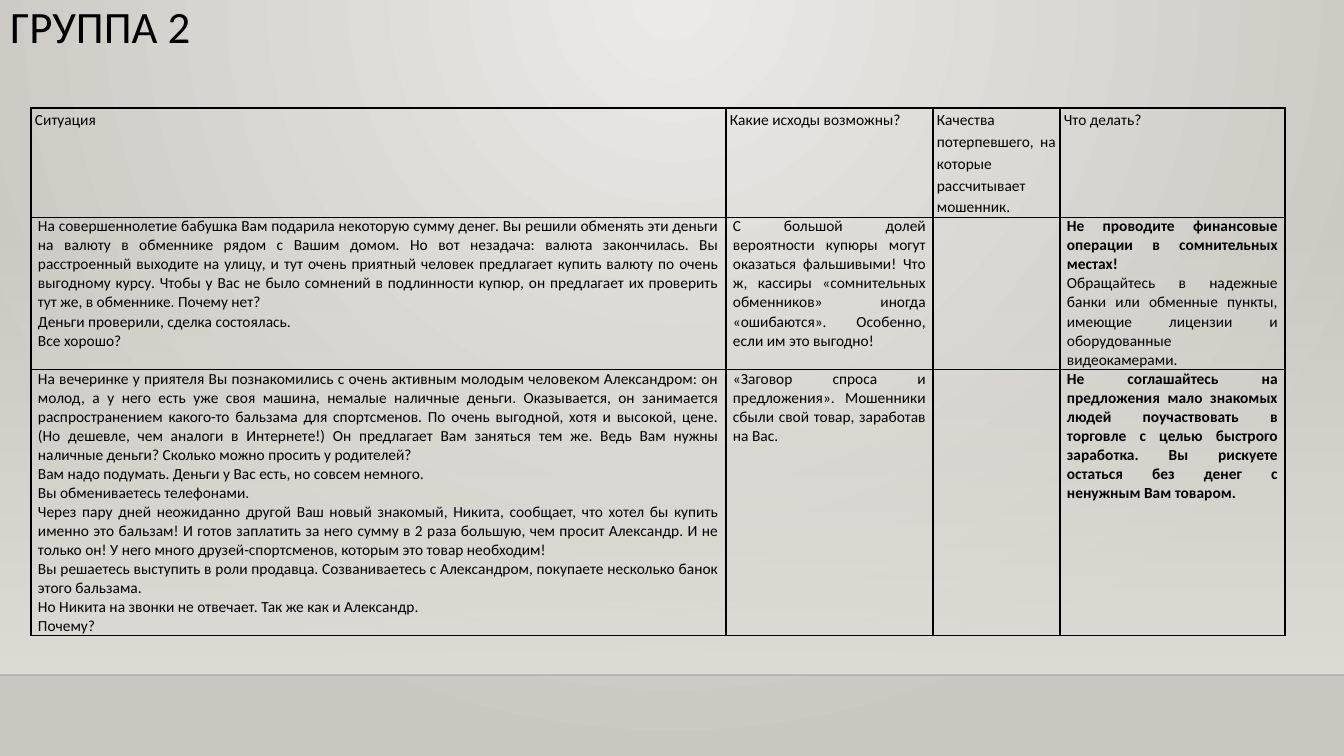
from dataclasses import dataclass

from lxml import etree
from pptx import Presentation, util as u
from pptx.dml.color import RGBColor
from pptx.enum import shapes, text
from pptx.oxml import ns, parse_xml

SCALE = 914400 / 100.8


def px(length):
    return u.Emu(round(length * SCALE))


@dataclass(frozen=True)
class Theme:
    font: str = "Calibri"
    ink: str = "000000"
    rule: str = "000001"
    glow: str = "ECEAE7"
    stone: str = "CAC7C1"
    wall: str = "DFDBD5"
    title_size: int = 32
    table_size: int = 11
    line_width: int = 1


class SlideBuilder:
    def __init__(self, deck, theme):
        self.theme = theme
        self.page = deck.slides.add_slide(deck.slide_layouts[5])

    def style(self, para, size, bold=False):
        for span in para.runs:
            span.font.name = self.theme.font
            span.font.size = u.Pt(size)
            span.font.bold = bold
            span.font.color.rgb = RGBColor.from_string(self.theme.ink)

    def gradient(self, fill, start, end):
        fill.gradient()
        for stop, color, position in zip(fill.gradient_stops, (start, end), (0, 1)):
            stop.color.rgb = RGBColor.from_string(color)
            stop.position = position

    def set_alpha(self, color, percent):
        alpha = etree.SubElement(color, ns.qn("a:alpha"))
        alpha.set("val", str(percent * 1000))

    def background(self):
        self.gradient(self.page.background.fill, self.theme.glow, self.theme.stone)
        linear = next(self.page.element.iter(ns.qn("a:lin")))
        radial = parse_xml(
            f'<a:path {ns.nsdecls("a")} path="circle">'
            '<a:fillToRect l="43000" t="0" r="43000" b="100000"/></a:path>'
        )
        linear.getparent().replace(linear, radial)

    def wall(self, left, top, width, height):
        box = self.page.shapes.add_shape(
            shapes.MSO_SHAPE.RECTANGLE, px(left), px(top), px(width), px(height)
        )
        box.shadow.inherit = False
        box.line.fill.background()
        self.gradient(box.fill, self.theme.wall, self.theme.wall)
        box.fill.gradient_angle = 270
        self.set_alpha(next(box.element.spPr.iter(ns.qn("a:srgbClr"))), 0)

    def floor_line(self, left, right, y):
        line = self.page.shapes.add_connector(
            shapes.MSO_CONNECTOR.STRAIGHT, px(left), px(y), px(right), px(y)
        )
        line.line.width = u.Pt(self.theme.line_width)
        line.line.color.rgb = RGBColor.from_string(self.theme.rule)
        properties = line.element.spPr
        self.set_alpha(next(properties.iter(ns.qn("a:srgbClr"))), 20)
        etree.SubElement(properties, ns.qn("a:effectLst"))

    def title(self, wording, left, top, width, height):
        box = self.page.shapes.title
        box.left, box.top, box.width, box.height = map(px, (left, top, width, height))
        frame = box.text_frame
        frame.text = wording
        frame.auto_size = text.MSO_AUTO_SIZE.NONE
        frame.vertical_anchor = text.MSO_ANCHOR.TOP
        para = frame.paragraphs[0]
        para.alignment = text.PP_ALIGN.LEFT
        para.line_spacing = 0.9
        self.style(para, self.theme.title_size)

    def cell_borders(self, cell):
        properties = cell._tc.get_or_add_tcPr()
        for index, side in enumerate("LRTB"):
            border = parse_xml(
                f'<a:ln{side} {ns.nsdecls("a")} w="{u.Pt(self.theme.line_width)}">'
                f'<a:solidFill><a:srgbClr val="{self.theme.ink}"/></a:solidFill>'
                f'<a:prstDash val="solid"/></a:ln{side}>'
            )
            properties.insert(index, border)

    def cell(self, cell, lines, header, bold_lead):
        cell.fill.background()
        self.cell_borders(cell)
        cell.margin_left = cell.margin_right = px(4 if header else 7)
        cell.margin_top = cell.margin_bottom = 0
        cell.text_frame.text = "\n".join(lines)
        for index, para in enumerate(cell.text_frame.paragraphs):
            para.alignment = text.PP_ALIGN.JUSTIFY
            para.line_spacing = 1.15 if header else 1.0
            self.style(para, self.theme.table_size, bold_lead and index == 0)

    def table(self, rows, left, top, widths, heights):
        frame = self.page.shapes.add_table(
            len(rows), len(widths), px(left), px(top), px(sum(widths)), px(sum(heights))
        )
        table = frame.table
        table.first_row = table.horz_banding = False
        for column, width in zip(table.columns, widths):
            column.width = px(width)
        for row, height in zip(table.rows, heights):
            row.height = px(height)
        advice = len(widths) - 1
        for r, row in enumerate(rows):
            for c, lines in enumerate(row):
                self.cell(table.cell(r, c), lines, r == 0, r > 0 and c == advice)


HEADINGS = (
    ["Ситуация"],
    ["Какие исходы возможны?"],
    ["Качества потерпевшего, на которые рассчитывает мошенник."],
    ["Что делать?"],
)
CURRENCY = (
    [
        "На совершеннолетие бабушка Вам подарила некоторую сумму денег. Вы решили "
        "обменять эти деньги на валюту в обменнике рядом с Вашим домом. Но вот незадача: "
        "валюта закончилась. Вы расстроенный выходите на улицу, и тут очень приятный "
        "человек предлагает купить валюту по очень выгодному курсу. Чтобы у Вас не было "
        "сомнений в подлинности купюр, он предлагает их проверить тут же, в обменнике. "
        "Почему нет?",
        "Деньги проверили, сделка состоялась.",
        "Все хорошо?",
    ],
    [
        "С большой долей вероятности купюры могут оказаться фальшивыми! Что ж, кассиры "
        "«сомнительных обменников» иногда «ошибаются». Особенно, если им это выгодно!"
    ],
    [],
    [
        "Не проводите финансовые операции в сомнительных местах!",
        "Обращайтесь в надежные банки или обменные пункты, имеющие лицензии и "
        "оборудованные видеокамерами.",
    ],
)
BALSAM = (
    [
        "На вечеринке у приятеля Вы познакомились с очень активным молодым человеком "
        "Александром: он молод, а у него есть уже своя машина, немалые наличные деньги. "
        "Оказывается, он занимается распространением какого-то бальзама для спортсменов. "
        "По очень выгодной, хотя и высокой, цене. (Но дешевле, чем аналоги в Интернете!) "
        "Он предлагает Вам заняться тем же. Ведь Вам нужны наличные деньги? Сколько "
        "можно просить у родителей?",
        "Вам надо подумать. Деньги у Вас есть, но совсем немного.",
        "Вы обмениваетесь телефонами.",
        "Через пару дней неожиданно другой Ваш новый знакомый, Никита, сообщает, что "
        "хотел бы купить именно это бальзам! И готов заплатить за него сумму в 2 раза "
        "большую, чем просит Александр. И не только он! У него много друзей-спортсменов, "
        "которым это товар необходим!",
        "Вы решаетесь выступить в роли продавца. Созваниваетесь с Александром, "
        "покупаете несколько банок этого бальзама.",
        "Но Никита на звонки не отвечает. Так же как и Александр.",
        "Почему?",
    ],
    ["«Заговор спроса и предложения». Мошенники сбыли свой товар, заработав на Вас."],
    [],
    [
        "Не соглашайтесь на предложения мало знакомых людей поучаствовать в торговле с "
        "целью быстрого заработка. Вы рискуете остаться без денег с ненужным Вам товаром."
    ],
)


def main():
    deck = Presentation()
    deck.slide_width, deck.slide_height = px(1344), px(756)
    slide = SlideBuilder(deck, Theme())
    slide.background()
    slide.wall(0, 223, 1344, 452)
    slide.floor_line(0, 1344, 675)
    slide.title("ГРУППА 2", 0, 0, 1159, 146)
    slide.table(
        (HEADINGS, CURRENCY, BALSAM), 31, 108, (695, 207, 127, 225), (86, 139, 212)
    )
    deck.save("out.pptx")


if __name__ == "__main__":
    main()
